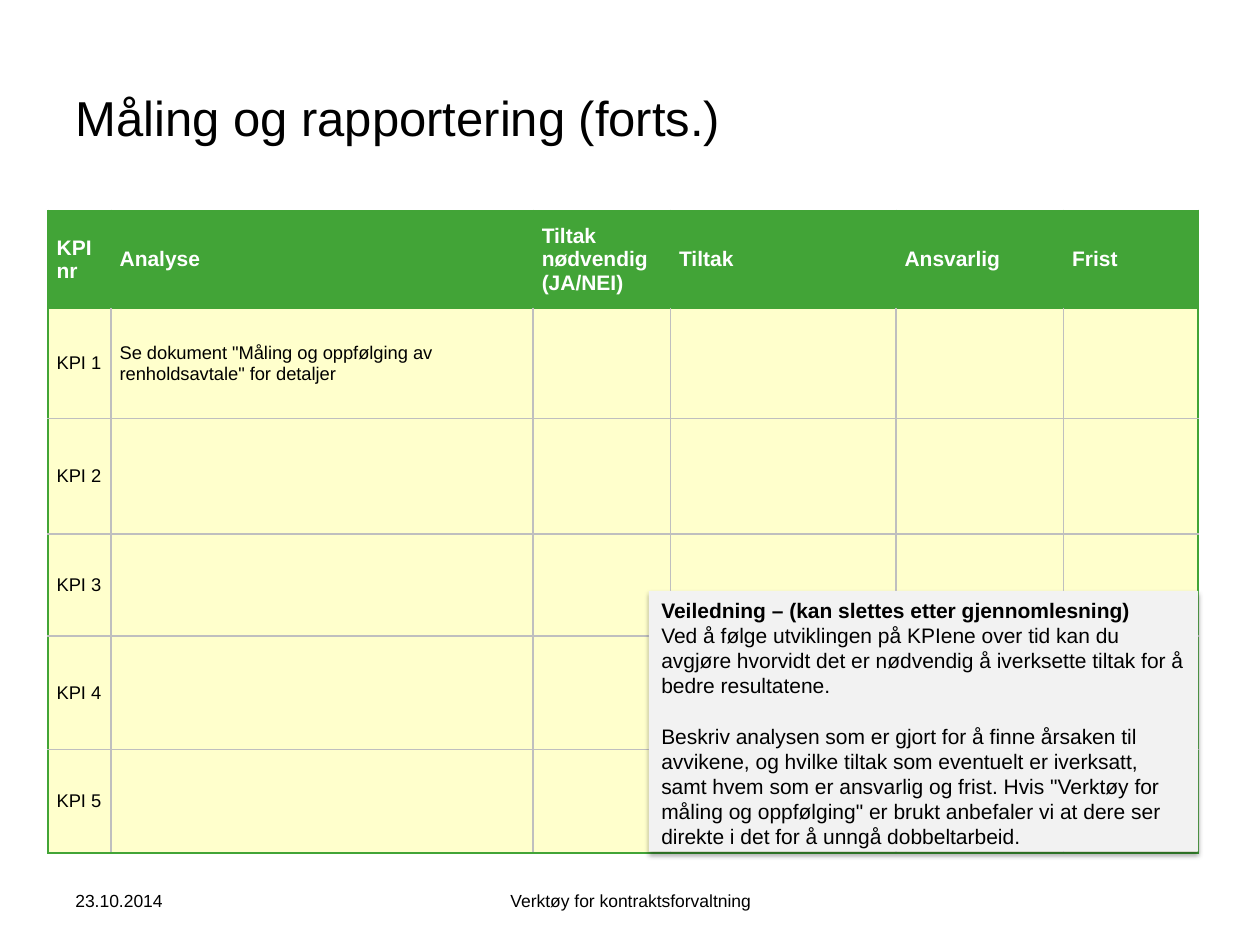
from lxml import etree
from pptx import Presentation
from pptx.dml.color import RGBColor
from pptx.enum.shapes import MSO_SHAPE
from pptx.enum.text import MSO_ANCHOR, PP_ALIGN
from pptx.oxml import parse_xml
from pptx.oxml.ns import nsdecls, qn
from pptx.util import Inches, Pt

COLORS = {"text": "000000", "header": "42A437", "header_text": "FFFFFF",
          "cell": "FFFFCC", "grid": "BFBFBF", "note": "F2F2F2"}
FONT = "Arial"

COL_WIDTHS = [0.5, 3.35, 1.09, 1.79, 1.33, 1.07]
ROW_HEIGHTS = [0.78, 0.87, 0.92, 0.81, 0.9, 0.82]
HEADERS = ["KPI nr", "Analyse", "Tiltak nødvendig (JA/NEI)", "Tiltak",
           "Ansvarlig", "Frist"]
ANALYSIS = {1: 'Se dokument "Måling og oppfølging av renholdsavtale" for detaljer'}

# Text, bold, space before in points
GUIDANCE = [
    ("Veiledning – (kan slettes etter gjennomlesning)", True, 0),
    ("Ved å følge utviklingen på KPIene over tid kan du avgjøre hvorvidt det "
     "er nødvendig å iverksette tiltak for å bedre resultatene.", False, 0),
    ("Beskriv analysen som er gjort for å finne årsaken til avvikene, og "
     "hvilke tiltak som eventuelt er iverksatt, samt hvem som er ansvarlig og "
     'frist. Hvis "Verktøy for måling og oppfølging" er brukt anbefaler vi at '
     "dere ser direkte i det for å unngå dobbeltarbeid.", False, 14.4),
]


def rgb(name):
    return RGBColor.from_string(COLORS[name])


def place(shape, left, top, width, height):
    shape.left, shape.top = Inches(left), Inches(top)
    shape.width, shape.height = Inches(width), Inches(height)


def add_run(p, text, size, color="text", bold=False):
    r = p.add_run()
    r.text = text
    r.font.name, r.font.size, r.font.bold = FONT, Pt(size), bold
    r.font.color.rgb = rgb(color)


def add_title(s, text):
    title = s.shapes.title
    place(title, 0.5, 0.3, 9, 1.25)
    tf = title.text_frame
    tf.vertical_anchor = MSO_ANCHOR.MIDDLE
    p = tf.paragraphs[0]
    p.alignment = PP_ALIGN.LEFT
    add_run(p, text, 28)


def set_borders(cell, sides):
    """Draw 1 pt lines in the colours named for left, right, top, bottom."""
    tc_pr = cell._tc.get_or_add_tcPr()
    for i, (tag, color) in enumerate(zip(("lnL", "lnR", "lnT", "lnB"), sides)):
        line = parse_xml(f'<a:{tag} {nsdecls("a")} w="{Pt(1)}"><a:solidFill>'
                         f'<a:srgbClr val="{COLORS[color]}"/></a:solidFill></a:{tag}>')
        tc_pr.insert(i, line)


def format_cell(cell, text, is_header, sides):
    cell.fill.solid()
    cell.fill.fore_color.rgb = rgb("header" if is_header else "cell")
    cell.vertical_anchor = MSO_ANCHOR.MIDDLE
    cell.margin_left = cell.margin_right = Inches(0.07)
    cell.margin_top = cell.margin_bottom = 0
    set_borders(cell, sides)
    if is_header:
        add_run(cell.text_frame.paragraphs[0], text, 12, "header_text", True)
    elif text:
        add_run(cell.text_frame.paragraphs[0], text, 10.5)


def add_kpi_table(s):
    n_rows, n_cols = len(ROW_HEIGHTS), len(COL_WIDTHS)
    table = s.shapes.add_table(n_rows, n_cols, Inches(0.38), Inches(1.67),
                               Inches(sum(COL_WIDTHS)),
                               Inches(sum(ROW_HEIGHTS))).table
    for column, width in zip(table.columns, COL_WIDTHS):
        column.width = Inches(width)
    for row, height in zip(table.rows, ROW_HEIGHTS):
        row.height = Inches(height)

    for i in range(n_rows):
        texts = HEADERS if i == 0 else [f"KPI {i}", ANALYSIS.get(i, "")]
        for j in range(n_cols):
            # Green around the header and the outer edge, grey inside
            green = (i == 0 or j == 0, i == 0 or j == n_cols - 1,
                     i <= 1, i in (0, n_rows - 1))
            sides = ["header" if g else "grid" for g in green]
            text = texts[j] if j < len(texts) else ""
            format_cell(table.cell(i, j), text, i == 0, sides)


def add_shadow(shape):
    effects = parse_xml(
        f'<a:effectLst {nsdecls("a")}><a:outerShdw blurRad="{Pt(3.1)}" '
        f'dist="{Pt(1.8)}" dir="5400000" rotWithShape="0"/></a:effectLst>')
    color = etree.SubElement(effects[0], qn("a:srgbClr"), val=COLORS["text"])
    etree.SubElement(color, qn("a:alpha"), val="35000")
    shape._element.spPr.append(effects)


def add_guidance(s):
    sp = s.shapes.add_shape(MSO_SHAPE.RECTANGLE, Inches(5.15), Inches(4.69),
                            Inches(4.36), Inches(2.07))
    sp.fill.solid()
    sp.fill.fore_color.rgb = rgb("note")
    sp.line.fill.background()
    add_shadow(sp)
    tf = sp.text_frame
    tf.word_wrap = True
    tf.vertical_anchor = MSO_ANCHOR.TOP
    for i, (text, bold, before) in enumerate(GUIDANCE):
        p = tf.add_paragraph() if i else tf.paragraphs[0]
        p.alignment = PP_ALIGN.LEFT
        if before:
            p.space_before = Pt(before)
        add_run(p, text, 12, bold=bold)


def add_footer(s, text, left, width, align):
    tf = s.shapes.add_textbox(Inches(left), Inches(6.95), Inches(width),
                              Inches(0.4)).text_frame
    tf.word_wrap = True
    tf.vertical_anchor = MSO_ANCHOR.MIDDLE
    p = tf.paragraphs[0]
    p.alignment = align
    add_run(p, text, 10)


def main():
    prs = Presentation()
    prs.slide_width, prs.slide_height = Inches(10), Inches(7.5)
    s = prs.slides.add_slide(prs.slide_layouts[5])
    add_title(s, "Måling og rapportering (forts.)")
    add_kpi_table(s)
    add_guidance(s)
    add_footer(s, "23.10.2014", 0.5, 2.33, PP_ALIGN.LEFT)
    add_footer(s, "Verktøy for kontraktsforvaltning", 3.42, 3.17, PP_ALIGN.CENTER)
    prs.save("out.pptx")


if __name__ == "__main__":
    main()
